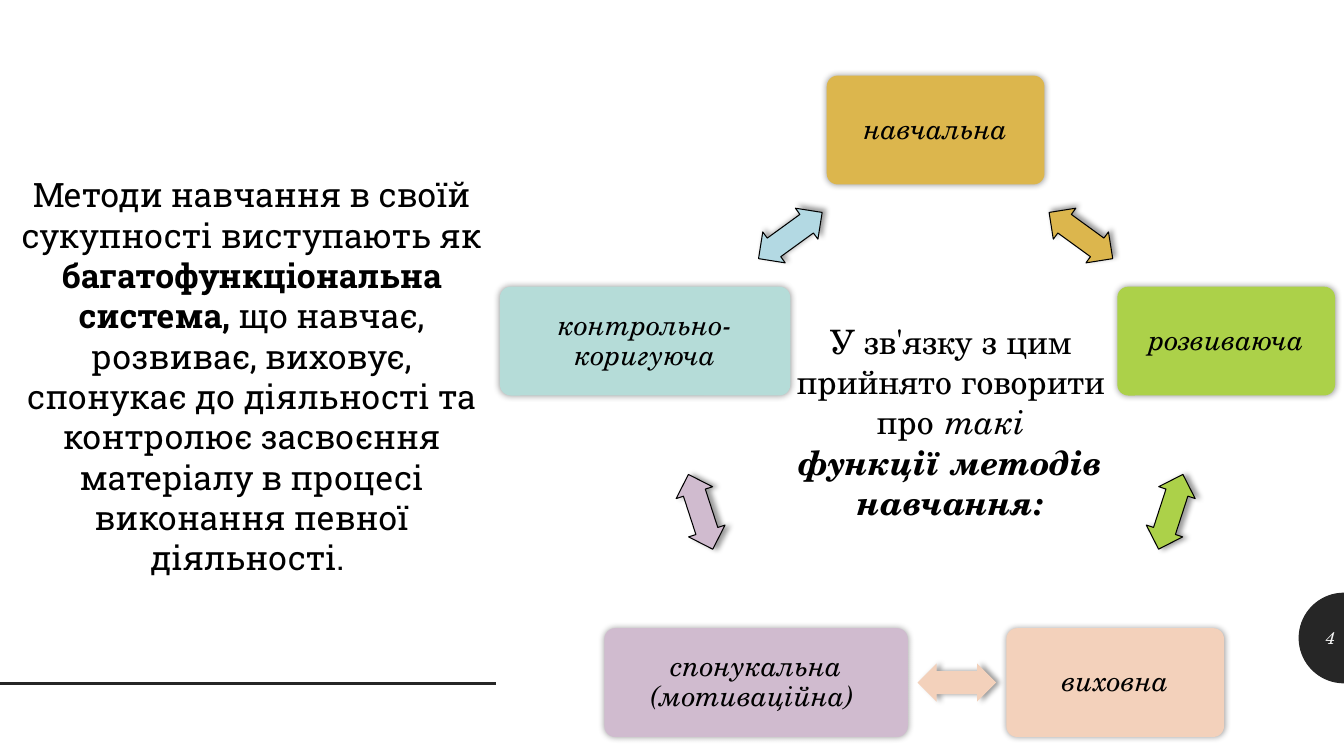
from math import cos, radians, sin

from lxml.etree import SubElement
from pptx import Presentation
from pptx.dml.color import RGBColor
from pptx.enum.shapes import MSO_CONNECTOR, MSO_SHAPE
from pptx.enum.text import MSO_ANCHOR, MSO_AUTO_SIZE, PP_ALIGN
from pptx.oxml.ns import qn
from pptx.util import Inches, Pt

BLACK = RGBColor(0x00, 0x00, 0x00)
DARK = RGBColor(0x26, 0x26, 0x26)
PALE = RGBColor(0xF5, 0xF5, 0xF5)
GOLD = RGBColor(0xDC, 0xB6, 0x4D)
GREEN = RGBColor(0xAC, 0xD1, 0x49)
PEACH = RGBColor(0xF3, 0xD1, 0xBB)
MAUVE = RGBColor(0xD0, 0xBB, 0xCF)
TEAL = RGBColor(0xB5, 0xDC, 0xD8)
BLUE = RGBColor(0xB3, 0xD9, 0xE3)

SLAB = "Roboto Slab"
SCHOLA = "TeX Gyre Schola"
HARD_SPACE = chr(160)

CENTER_X, CENTER_Y, RADIUS = 9.28, 4.32, 3.03
BOX_HEIGHT = 1.08
ARROW_WIDTH, ARROW_HEIGHT = 0.78, 0.38

FUNCTIONS = [
    ("навчальна", 2.16, GOLD, GOLD, True, 0, 315),
    ("розвиваюча", 2.16, GREEN, GREEN, True, 0, 0),
    ("виховна", 2.16, PEACH, PEACH, False, 0.21, 0),
    ("спонукальна (мотиваційна) ", 3.01, MAUVE, MAUVE, True, 0, 0),
    ("контрольно-коригуюча", 2.88, TEAL, BLUE, True, 0, 315),
]


def write_text(frame, runs, font=SCHOLA, size=24, color=BLACK, align=PP_ALIGN.CENTER,
               anchor=MSO_ANCHOR.TOP, spacing=None, margin=None):
    """Fill a text frame with one paragraph of (text, bold, italic) runs."""
    frame.word_wrap = True
    frame.vertical_anchor = anchor
    if margin is not None:
        frame.margin_left = frame.margin_right = Inches(margin)
        frame.margin_top = frame.margin_bottom = Inches(margin)
    paragraph = frame.paragraphs[0]
    paragraph.alignment = align
    paragraph.line_spacing = spacing
    for text, bold, italic in runs:
        run = paragraph.add_run()
        run.text = text
        run.font.name = font
        run.font.size = Pt(size)
        run.font.bold = bold
        run.font.italic = italic
        run.font.color.rgb = color


def add_text(slide, left, top, width, height, runs, **text_format):
    """Add a text box and return its frame."""
    frame = slide.shapes.add_textbox(
        Inches(left), Inches(top), Inches(width), Inches(height)).text_frame
    write_text(frame, runs, **text_format)
    return frame


def add_shadow(shape, blur, distance, direction):
    """Give a shape a soft black shadow."""
    effects = SubElement(shape._element.spPr, qn("a:effectLst"))
    shadow = SubElement(effects, qn("a:outerShdw"), blurRad=str(Pt(blur)),
                        dist=str(Pt(distance)), dir=str(direction * 60000),
                        rotWithShape="0")
    black = SubElement(shadow, qn("a:srgbClr"), val="000000")
    SubElement(black, qn("a:alpha"), val="40000")


def add_centered(slide, preset, x, y, width, height, fill, adjustments, outlined=False):
    """Add a filled preset shape around a centre point."""
    shape = slide.shapes.add_shape(
        preset, Inches(x - width / 2), Inches(y - height / 2),
        Inches(width), Inches(height))
    for index, value in enumerate(adjustments):
        shape.adjustments[index] = value
    shape.fill.solid()
    shape.fill.fore_color.rgb = fill
    if outlined:
        shape.line.color.rgb = BLACK
        shape.line.width = Pt(0.75)
    else:
        shape.line.fill.background()
    return shape


def ring_point(angle, radius):
    """Return the point of the ring at a clockwise angle from the top."""
    return (CENTER_X + radius * sin(radians(angle)),
            CENTER_Y - radius * cos(radians(angle)))


def add_cycle(slide):
    """Add the ring of teaching functions and the arrows between them."""
    step = 360 / len(FUNCTIONS)
    for index, (label, width, fill, arrow_fill, outlined, shift, direction) in enumerate(FUNCTIONS):
        x, y = ring_point(index * step, RADIUS)
        box = add_centered(slide, MSO_SHAPE.ROUNDED_RECTANGLE, x, y, width, BOX_HEIGHT,
                           fill, [0.1])
        add_shadow(box, 5, 0, 0)
        write_text(box.text_frame, [(label, False, True)], size=20, spacing=0.9,
                   anchor=MSO_ANCHOR.MIDDLE, margin=0.08)

        angle = (index + 0.5) * step
        x, y = ring_point(angle, RADIUS * cos(radians(step / 2)))
        arrow = add_centered(slide, MSO_SHAPE.LEFT_RIGHT_ARROW, x + shift, y,
                             ARROW_WIDTH, ARROW_HEIGHT, arrow_fill, [0.6, 0.5], outlined)
        arrow.rotation = angle
        add_shadow(arrow, 4, 3, direction)


def add_page_mark(slide, number):
    """Add the half disc at the right edge with the slide number."""
    edge, middle, radius = 13.33, 6.33, 0.45
    arc = [(Inches(edge - radius * sin(radians(angle))),
            Inches(middle - radius * cos(radians(angle))))
           for angle in range(0, 181, 5)]
    builder = slide.shapes.build_freeform(*arc[0])
    builder.add_line_segments(arc[1:], close=True)
    half_disc = builder.convert_to_shape()
    half_disc.shadow.inherit = False
    half_disc.fill.solid()
    half_disc.fill.fore_color.rgb = DARK
    half_disc.line.fill.background()
    add_text(slide, 12.89, 6.13, 0.45, 0.4, [(number, False, True)], size=12,
             color=PALE, align=PP_ALIGN.RIGHT, anchor=MSO_ANCHOR.MIDDLE)


def add_rule(slide):
    """Add the dark rule at the lower left."""
    rule = slide.shapes.add_connector(
        MSO_CONNECTOR.STRAIGHT, Inches(0), Inches(6.78), Inches(4.92), Inches(6.78))
    rule.line.color.rgb = DARK
    rule.line.width = Pt(2)
    SubElement(rule._element.spPr, qn("a:effectLst"))


def main():
    """Build the slide and save it."""
    deck = Presentation()
    deck.slide_width, deck.slide_height = Inches(13.33), Inches(7.5)
    slide = deck.slides.add_slide(deck.slide_layouts[6])
    add_page_mark(slide, "4")
    add_rule(slide)
    summary = add_text(slide, 0, 1.68, 4.99, 4.14, [
        ("Методи навчання в своїй сукупності виступають як ", False, False),
        ("багатофункціональна система, ", True, False),
        ("що навчає, розвиває, виховує, спонукає до діяльності та контролює "
         "засвоєння матеріалу в процесі виконання певної діяльності. ", False, False),
    ], font=SLAB)
    lead = add_text(slide, 7.39, 3.13, 4.08, 2.12, [
        (f"У зв'язку з цим прийнято говорити про{HARD_SPACE}", False, False),
        ("такі ", False, True),
        (f"функції{HARD_SPACE}методів навчання:", True, True),
    ])
    for frame in (summary, lead):
        frame.auto_size = MSO_AUTO_SIZE.SHAPE_TO_FIT_TEXT
    add_cycle(slide)
    deck.save("out.pptx")


if __name__ == "__main__":
    main()
